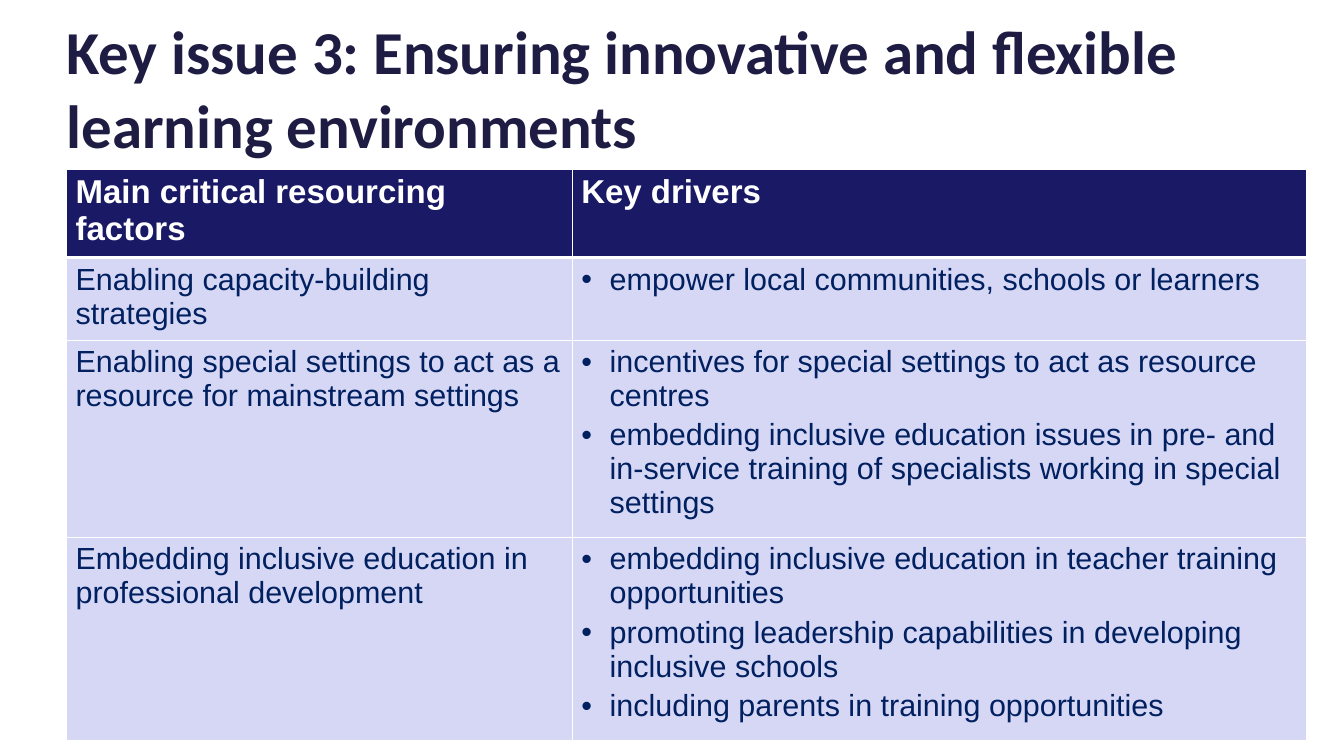
from dataclasses import dataclass

from lxml.etree import SubElement
from pptx import Presentation
from pptx.dml.color import RGBColor
from pptx.enum.text import MSO_ANCHOR
from pptx.oxml.ns import qn
from pptx.util import Cm, Pt


@dataclass(frozen=True)
class Theme:
    title_font: str = "Calibri"
    body_font: str = "Arial"
    title_size: int = 48
    header_size: int = 26
    body_size: int = 24
    title_color: str = "1E1C43"
    header_color: str = "FFFFFF"
    body_color: str = "002060"
    header_fill: str = "191966"
    body_fill: str = "D6D6F5"
    border: str = "FFFFFF"


THEME = Theme()
TITLE = "Key issue 3: Ensuring innovative and flexible learning environments"
HEADERS = ["Main critical resourcing factors", "Key drivers"]
FACTORS = [
    ("Enabling capacity-building strategies",
     ["empower local communities, schools or learners"]),
    ("Enabling special settings to act as a resource for mainstream settings",
     ["incentives for special settings to act as resource centres",
      "embedding inclusive education issues in pre- and in-service training "
      "of specialists working in special settings"]),
    ("Embedding inclusive education in professional development",
     ["embedding inclusive education in teacher training opportunities",
      "promoting leadership capabilities in developing inclusive schools",
      "including parents in training opportunities"]),
]
COLUMN_WIDTHS = [14.05, 20.4]
ROW_HEIGHTS = [2.3, 2.13, 5.13, 5.26]


def add_bullet(para, indent=Cm(0.79)):
    properties = para._p.get_or_add_pPr()
    properties.set("marL", str(indent))
    properties.set("indent", str(-indent))
    SubElement(properties, qn("a:buFont"), typeface="Arial")
    SubElement(properties, qn("a:buChar"), char="•")


def write(frame, lines, *, font, size, color, bold=False, bullets=False, gap=0):
    for index, line in enumerate(lines):
        para = frame.add_paragraph() if index else frame.paragraphs[0]
        if bullets:
            add_bullet(para)
        if index:
            para.space_before = Pt(gap)
        para.space_after = Pt(gap)
        span = para.add_run()
        span.text = line
        span.font.name = font
        span.font.size = Pt(size)
        span.font.bold = bold
        span.font.color.rgb = RGBColor.from_string(color)


def set_borders(cell, widths):
    """Draw the cell's edges; widths maps L, R, T and B to points."""
    properties = cell._tc.get_or_add_tcPr()
    for position, (side, width) in enumerate(widths.items()):
        line = SubElement(properties, qn(f"a:ln{side}"), w=str(Pt(width)))
        fill = SubElement(line, qn("a:solidFill"))
        SubElement(fill, qn("a:srgbClr"), val=THEME.border)
        properties.insert(position, line)


def add_title(page, left, top, width, height):
    frame = page.shapes.add_textbox(left, top, width, height).text_frame
    frame.word_wrap = True
    frame.vertical_anchor = MSO_ANCHOR.MIDDLE
    frame.margin_left = frame.margin_right = 0
    frame.margin_top = frame.margin_bottom = 0
    write(frame, [TITLE], font=THEME.title_font, size=THEME.title_size,
          color=THEME.title_color, bold=True)


def fill_cell(cell, lines, header=False, bullets=False, under_header=False):
    cell.fill.solid()
    cell.fill.fore_color.rgb = RGBColor.from_string(
        THEME.header_fill if header else THEME.body_fill)
    set_borders(cell, {"L": 1, "R": 1, "T": 3 if under_header else 1,
                       "B": 3 if header else 1})
    cell.margin_left = cell.margin_right = Cm(0.25)
    cell.margin_top = cell.margin_bottom = Cm(0.13)
    write(cell.text_frame, lines, font=THEME.body_font,
          size=THEME.header_size if header else THEME.body_size,
          color=THEME.header_color if header else THEME.body_color,
          bold=header, bullets=bullets, gap=2)


def add_factor_table(page, left, top, width, height):
    table = page.shapes.add_table(
        len(FACTORS) + 1, len(HEADERS), left, top, width, height).table
    for column, size in zip(table.columns, COLUMN_WIDTHS):
        column.width = Cm(size)
    for row, size in zip(table.rows, ROW_HEIGHTS):
        row.height = Cm(size)
    for column, heading in enumerate(HEADERS):
        fill_cell(table.cell(0, column), [heading], header=True)
    for row, (factor, drivers) in enumerate(FACTORS, start=1):
        fill_cell(table.cell(row, 0), [factor], under_header=row == 1)
        fill_cell(table.cell(row, 1), drivers, bullets=True,
                  under_header=row == 1)


def main():
    deck = Presentation()
    deck.slide_width, deck.slide_height = Cm(37.34), Cm(21)
    page = deck.slides.add_slide(deck.slide_layouts[6])
    left = Cm(1.85)
    add_title(page, left, Cm(0.3), Cm(34.52), Cm(4.24))
    add_factor_table(page, left, Cm(4.7), Cm(sum(COLUMN_WIDTHS)),
                     Cm(sum(ROW_HEIGHTS)))
    deck.save("out.pptx")


if __name__ == "__main__":
    main()
